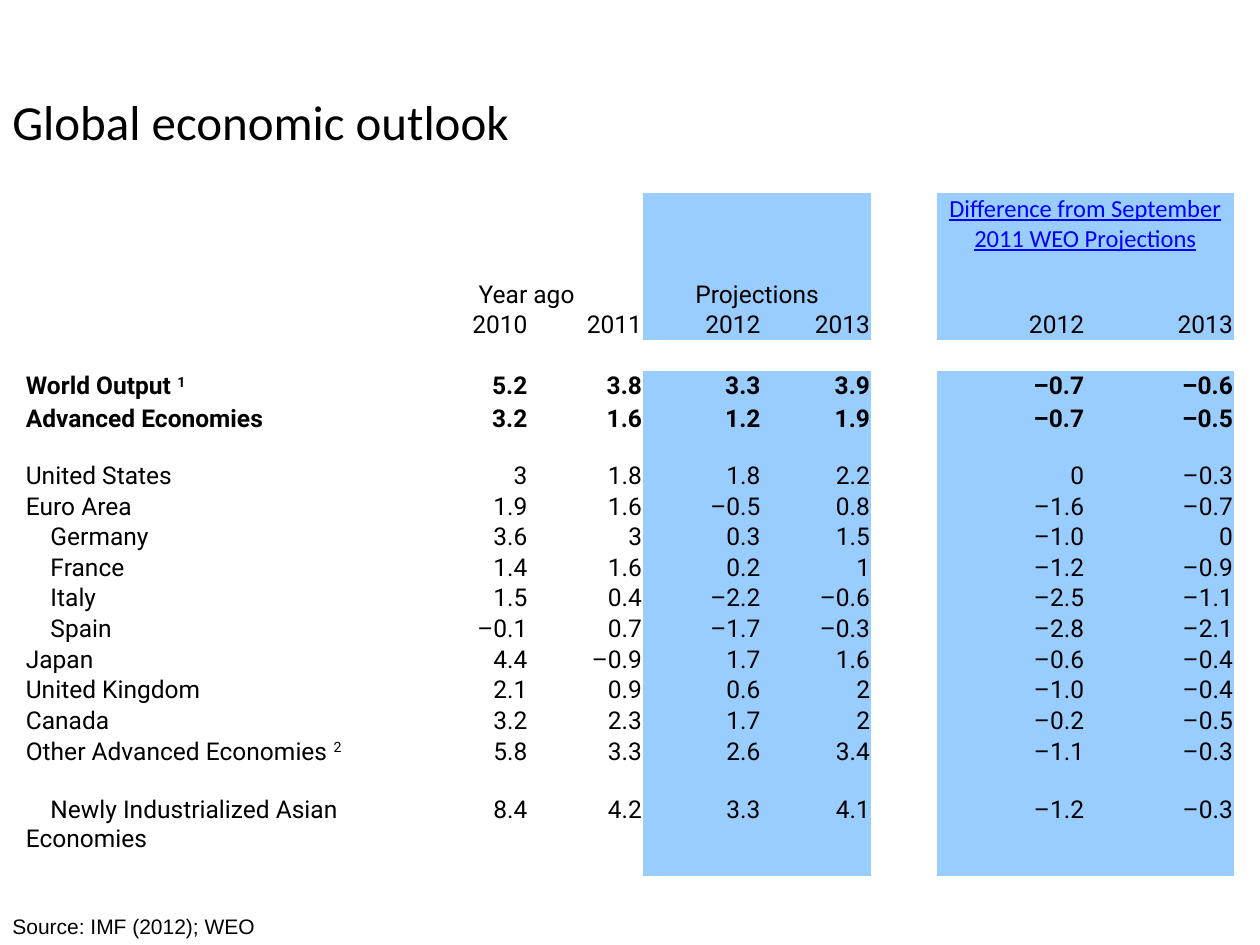
from pptx import Presentation
from pptx.dml.color import RGBColor
from pptx.enum.text import MSO_ANCHOR, PP_ALIGN
from pptx.oxml.ns import qn
from pptx.util import Pt

BLACK = RGBColor(0x00, 0x00, 0x00)
LINK_BLUE = RGBColor(0x00, 0x00, 0xFF)
BAND_BLUE = RGBColor(0x99, 0xCC, 0xFF)
LEFT, CENTER, RIGHT = PP_ALIGN.LEFT, PP_ALIGN.CENTER, PP_ALIGN.RIGHT
TOP, MIDDLE, BOTTOM = MSO_ANCHOR.TOP, MSO_ANCHOR.MIDDLE, MSO_ANCHOR.BOTTOM
NO_STYLE = "{2D5ABB26-0587-4C30-8999-92F81FD0307C}"

TITLE = {"name": "Calibri", "size": Pt(28)}
SOURCE = {"name": "Arial", "size": Pt(12)}
BODY = {"name": "Roboto", "size": Pt(14)}
STRONG = {**BODY, "bold": True}
LINK = {"name": "Calibri", "size": Pt(14), "underline": True}

COL_WIDTHS = [220.3, 67.7, 65.5, 67.7, 62.6, 37.4, 85, 85]
ROW_HEIGHTS = [32.4, 17.5, 17.5, 17.5, 18.7, 32.4] + [17.5] * 9 + [33.5, 46.3]
BAND_COLS = {3, 4, 6, 7}
VALUE_COLS = [1, 2, 3, 4, 6, 7]
SPACER_ROW = 3
INDENT = Pt(14.1)

HEADINGS = [
    (1, "Year ago", BODY, BOTTOM),
    (3, "Projections", BODY, BOTTOM),
    (6, "Difference from September 2011 WEO Projections", LINK, TOP),
]
YEARS = "2010 2011 2012 2013 2012 2013"
ECONOMIES = [
    ("World Output ", "1", 0, "5.2 3.8 3.3 3.9 –0.7 –0.6"),
    ("Advanced Economies", "", 0, "3.2 1.6 1.2 1.9 –0.7 –0.5"),
    ("United States", "", 0, "3 1.8 1.8 2.2 0 –0.3"),
    ("Euro Area", "", 0, "1.9 1.6 –0.5 0.8 –1.6 –0.7"),
    ("Germany", "", 1, "3.6 3 0.3 1.5 –1.0 0"),
    ("France", "", 1, "1.4 1.6 0.2 1 –1.2 –0.9"),
    ("Italy", "", 1, "1.5 0.4 –2.2 –0.6 –2.5 –1.1"),
    ("Spain", "", 1, "–0.1 0.7 –1.7 –0.3 –2.8 –2.1"),
    ("Japan", "", 0, "4.4 –0.9 1.7 1.6 –0.6 –0.4"),
    ("United Kingdom", "", 0, "2.1 0.9 0.6 2 –1.0 –0.4"),
    ("Canada", "", 0, "3.2 2.3 1.7 2 –0.2 –0.5"),
    ("Other Advanced Economies ", "2", 0, "5.8 3.3 2.6 3.4 –1.1 –0.3"),
    ("Newly Industrialized Asian Economies", "", 1, "8.4 4.2 3.3 4.1 –1.2 –0.3"),
]


def add_run(p, text, fmt, color=BLACK):
    """Append a formatted run to a paragraph."""
    r = p.add_run()
    r.text = text
    for key, value in fmt.items():
        setattr(r.font, key, value)
    r.font.color.rgb = color
    return r


def add_text(slide, box, text, fmt, anchor):
    """Place one line of text in the given box."""
    tf = slide.shapes.add_textbox(*map(Pt, box)).text_frame
    tf.word_wrap = True
    tf.vertical_anchor = anchor
    add_run(tf.paragraphs[0], text, fmt)


def write_cell(cell, text, fmt, align, color=BLACK):
    """Write aligned text in a cell and return its paragraph."""
    p = cell.text_frame.paragraphs[0]
    p.alignment = align
    add_run(p, text, fmt, color)
    return p


def prepare_cells(table):
    """Set margins, fills and the size of empty cells."""
    margins = {"margin_left": Pt(0.7), "margin_right": Pt(0.7),
               "margin_top": Pt(0.7), "margin_bottom": 0}
    for i, row in enumerate(table.rows):
        for j, cell in enumerate(row.cells):
            for key, value in margins.items():
                setattr(cell, key, value)
            cell.text_frame.paragraphs[0].font.size = Pt(12)
            if j in BAND_COLS and i != SPACER_ROW:
                cell.fill.solid()
                cell.fill.fore_color.rgb = BAND_BLUE
            else:
                cell.fill.background()


def fill_values(table, row, values, fmt):
    """Write one row of figures under the year columns."""
    for col, value in zip(VALUE_COLS, values.split()):
        write_cell(table.cell(row, col), value, fmt, RIGHT)


def add_outlook_table(slide, left, top):
    """Place the outlook table with its top left corner at the given point."""
    frame = slide.shapes.add_table(
        len(ROW_HEIGHTS), len(COL_WIDTHS), Pt(left), Pt(top),
        Pt(sum(COL_WIDTHS)), Pt(sum(ROW_HEIGHTS)))
    table = frame.table
    table.first_row = table.horz_banding = False
    table._tbl.tblPr.find(qn("a:tableStyleId")).text = NO_STYLE
    for col, width in zip(table.columns, COL_WIDTHS):
        col.width = Pt(width)
    for row, height in zip(table.rows, ROW_HEIGHTS):
        row.height = Pt(height)
    prepare_cells(table)

    for col, text, fmt, anchor in HEADINGS:
        cell = table.cell(0, col)
        cell.merge(table.cell(1, col + 1))
        cell.vertical_anchor = anchor
        write_cell(cell, text, fmt, CENTER, LINK_BLUE if fmt is LINK else BLACK)
    fill_values(table, 2, YEARS, BODY)
    table.cell(SPACER_ROW, 0).merge(table.cell(SPACER_ROW, len(COL_WIDTHS) - 1))

    for row, (name, note, level, values) in enumerate(ECONOMIES, SPACER_ROW + 1):
        fmt = STRONG if row < SPACER_ROW + 3 else BODY
        p = write_cell(table.cell(row, 0), name, fmt, LEFT)
        if level:
            p._p.get_or_add_pPr().set("indent", str(level * INDENT))
        if note:
            add_run(p, note, fmt).font._element.set("baseline", "30000")
        fill_values(table, row, values, fmt)


def main():
    """Build the slide and save it."""
    prs = Presentation()
    prs.slide_width, prs.slide_height = Pt(720), Pt(540)
    slide = prs.slides.add_slide(prs.slide_layouts[6])
    add_text(slide, (0, 47.3, 648, 44), "Global economic outlook", TITLE, MIDDLE)
    add_text(slide, (0, 518.4, 184, 21.6), "Source: IMF (2012); WEO", SOURCE, TOP)
    add_outlook_table(slide, 14.1, 110.2)
    prs.save("out.pptx")


if __name__ == "__main__":
    main()
